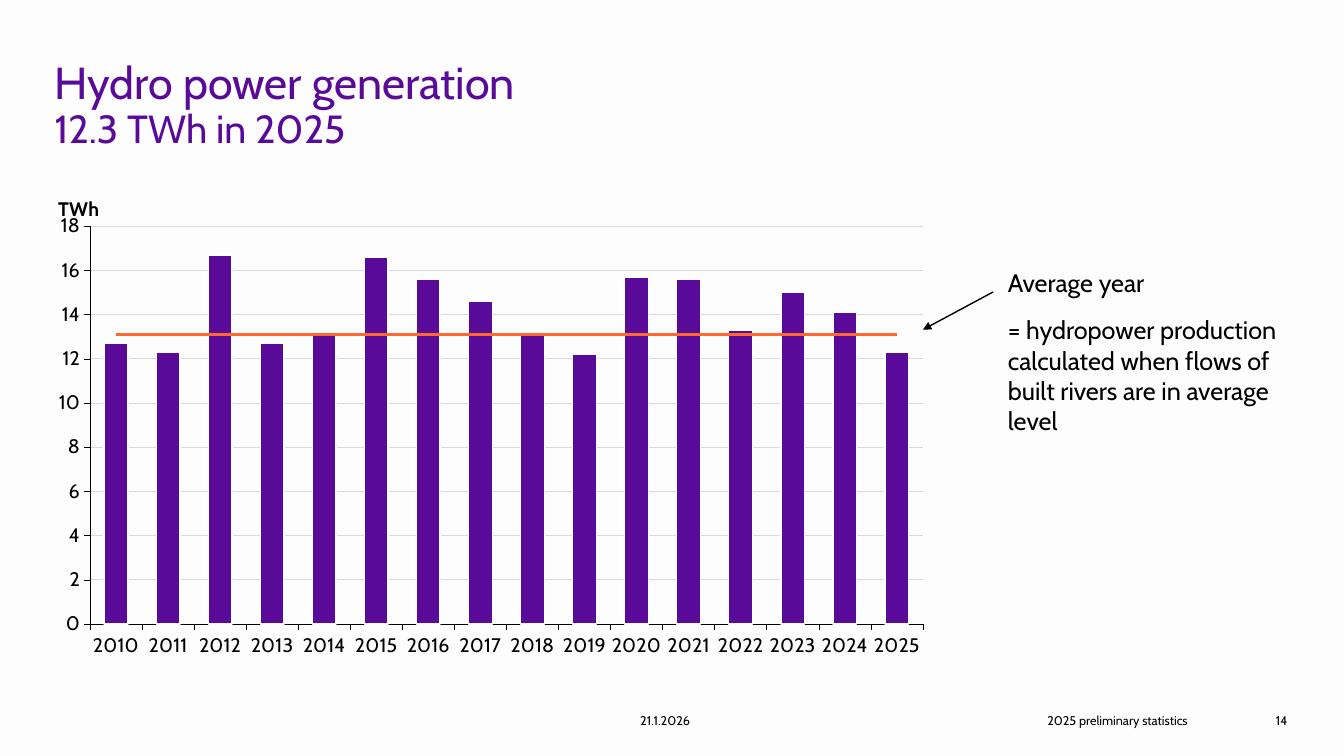
"""Build the hydro power generation slide."""
from dataclasses import dataclass

from lxml.etree import SubElement
from pptx import Presentation
from pptx.chart.chart import Chart
from pptx.chart.data import CategoryChartData
from pptx.dml.color import RGBColor
from pptx.dml.line import LineFormat
from pptx.enum.chart import XL_CHART_TYPE as ChartType, XL_MARKER_STYLE as Marker, XL_TICK_MARK as Tick
from pptx.enum.shapes import MSO_CONNECTOR as Connector
from pptx.enum.text import MSO_ANCHOR as Anchor, PP_ALIGN as Align
from pptx.oxml import parse_xml
from pptx.oxml.ns import nsdecls, qn
from pptx.slide import Slide
from pptx.util import Pt

PX = 9525
FONT = "Cabin"
BACKGROUND = RGBColor(0xFE, 0xFD, 0xFD)
PURPLE = RGBColor(0x59, 0x0A, 0x99)
ORANGE = RGBColor(0xFF, 0x69, 0x2E)
GRID = RGBColor(0xD9, 0xD9, 0xD9)
BLACK = RGBColor(0, 0, 0)
WHITE = RGBColor(0xFF, 0xFF, 0xFF)

YEARS = range(2010, 2026)
GENERATION = (12.7, 12.3, 16.7, 12.7, 13.2, 16.6, 15.6, 14.6,
              13.1, 12.2, 15.7, 15.6, 13.3, 15, 14.1, 12.3)
AVERAGE = 13.1


@dataclass(frozen=True)
class Box:
    left: int
    top: int
    width: int
    height: int

    def emu(self) -> tuple[int, int, int, int]:
        return self.left * PX, self.top * PX, self.width * PX, self.height * PX


@dataclass(frozen=True)
class Label:
    box: Box
    paragraphs: tuple[tuple[str, ...], ...]
    sizes: tuple[int, ...]
    color: RGBColor = BLACK
    inset_left: int = 0
    inset_right: int = 0
    align: Align = Align.LEFT
    anchor: Anchor = Anchor.TOP
    space_before: int = 0
    line_spacing: float = 1.0


@dataclass(frozen=True)
class Arrow:
    x1: int
    y1: int
    x2: int
    y2: int


LABELS = (
    Label(Box(52, 53, 1174, 105), (("Hydro power generation", "12.3 TWh in 2025"),),
          (32, 28), PURPLE, inset_right=10, line_spacing=0.9),
    Label(Box(580, 667, 107, 38), (("21.1.2026",),), (9,),
          align=Align.CENTER, anchor=Anchor.MIDDLE),
    Label(Box(709, 667, 422, 38), (("2025 preliminary statistics",),), (9,),
          inset_left=10, align=Align.RIGHT, anchor=Anchor.MIDDLE),
    Label(Box(1154, 667, 72, 38), (("14",),), (9,),
          inset_left=10, align=Align.RIGHT, anchor=Anchor.MIDDLE),
    Label(Box(960, 250, 266, 379),
          (("Average year",),
           ("= hydropower production calculated when flows of built rivers are in average level",)),
          (18,), inset_right=10, space_before=12),
)
CHART_BOX = Box(52, 173, 843, 456)
AVERAGE_ARROW = Arrow(946, 278, 879, 314)


def add_label(s: Slide, label: Label) -> None:
    tf = s.shapes.add_textbox(*label.box.emu()).text_frame
    tf.word_wrap = True
    tf.vertical_anchor = label.anchor
    tf.margin_left, tf.margin_right = label.inset_left * PX, label.inset_right * PX
    tf.margin_top = tf.margin_bottom = 5 * PX
    for i, lines in enumerate(label.paragraphs):
        p = tf.add_paragraph() if i else tf.paragraphs[0]
        p.alignment = label.align
        p.line_spacing = label.line_spacing
        if i:
            p.space_before = Pt(label.space_before)
        p.font.name = FONT
        p.font.size = Pt(label.sizes[0])
        p.font.color.rgb = label.color
        for j, (text, size) in enumerate(zip(lines, label.sizes)):
            if j:
                p.add_line_break()
            r = p.add_run()
            r.text = text
            if size != label.sizes[0]:
                r.font.size = Pt(size)


def set_line(line: LineFormat, color: RGBColor, width: float) -> None:
    line.color.rgb = color
    line.width = Pt(width)


def remove_children(parent, tag: str) -> None:
    for child in parent.findall(qn(tag)):
        parent.remove(child)


def set_layout(parent, index: int, **values: float | str) -> None:
    remove_children(parent, "c:layout")
    layout = parse_xml(f"<c:layout {nsdecls('c')}><c:manualLayout/></c:layout>")
    for name, value in values.items():
        SubElement(layout[0], qn(f"c:{name}")).set("val", str(value))
    parent.insert(index, layout)


def move_average_to_line(chart: Chart) -> None:
    bars = chart.plots[0]._element
    average = bars.findall(qn("c:ser"))[1]
    remove_children(average, "c:invertIfNegative")
    line_plot = parse_xml(
        f"<c:lineChart {nsdecls('c')}><c:grouping val='standard'/>"
        "<c:varyColors val='0'/><c:marker val='1'/></c:lineChart>")
    line_plot.insert(2, average)
    for axis_id in bars.findall(qn("c:axId")):
        SubElement(line_plot, qn("c:axId")).set("val", axis_id.get("val"))
    bars.addnext(line_plot)


def style_axes(chart: Chart) -> None:
    for axis in (chart.category_axis, chart.value_axis):
        axis.major_tick_mark, axis.minor_tick_mark = Tick.OUTSIDE, Tick.NONE
        set_line(axis.format.line, BLACK, 0.25)
        font = axis.tick_labels.font
        font.name, font.size = FONT, Pt(14)
        font.color.rgb = BLACK
    chart.category_axis.has_major_gridlines = False
    axis = chart.value_axis
    axis.minimum_scale, axis.maximum_scale, axis.major_unit = 0, 18, 2
    axis.has_major_gridlines = True
    set_line(axis.major_gridlines.format.line, GRID, 0.5)
    title = axis.axis_title
    p = title.text_frame.paragraphs[0]
    p.add_run().text = "TWh"
    p.font.name, p.font.size, p.font.bold = FONT, Pt(14), True
    p.font.color.rgb = BLACK
    body = next(title._element.iter(qn("a:bodyPr")))
    body.set("rot", "0")
    body.set("vert", "horz")
    set_layout(title._element, 1, xMode="edge", yMode="edge", x=0, y=0.02)


def add_generation_chart(s: Slide) -> None:
    data = CategoryChartData()
    data.categories = [str(year) for year in YEARS]
    data.add_series("Hydro power", GENERATION)
    data.add_series("Average year", [AVERAGE] * len(YEARS))
    chart = s.shapes.add_chart(ChartType.COLUMN_CLUSTERED, *CHART_BOX.emu(), data).chart
    chart.has_title = chart.has_legend = False
    chart.font.name, chart.font.size = FONT, Pt(14)
    chart.font.color.rgb = BLACK
    move_average_to_line(chart)
    bars, line = chart.plots
    bars.gap_width, bars.vary_by_categories = 120, False
    generation, average = bars.series[0], line.series[0]
    generation.format.fill.solid()
    generation.format.fill.fore_color.rgb = PURPLE
    set_line(generation.format.line, WHITE, 1)
    set_line(average.format.line, ORANGE, 2)
    average.marker.style = Marker.NONE
    average.smooth = False
    style_axes(chart)
    set_layout(bars._element.getparent(), 0, layoutTarget="inner", xMode="edge",
               yMode="edge", x=0.04, y=0.093, w=0.941, h=0.831)


def add_arrow(s: Slide, arrow: Arrow) -> None:
    ends = (v * PX for v in (arrow.x1, arrow.y1, arrow.x2, arrow.y2))
    connector = s.shapes.add_connector(Connector.STRAIGHT, *ends)
    set_line(connector.line, BLACK, 1)
    properties = connector._element.spPr
    SubElement(properties.find(qn("a:ln")), qn("a:tailEnd")).set("type", "triangle")
    SubElement(properties, qn("a:effectLst"))


def main() -> None:
    prs = Presentation()
    prs.slide_width, prs.slide_height = 1280 * PX, 720 * PX
    s = prs.slides.add_slide(prs.slide_layouts[6])
    s.background.fill.solid()
    s.background.fill.fore_color.rgb = BACKGROUND
    for label in LABELS:
        add_label(s, label)
    add_generation_chart(s)
    add_arrow(s, AVERAGE_ARROW)
    prs.save("out.pptx")


if __name__ == "__main__":
    main()
